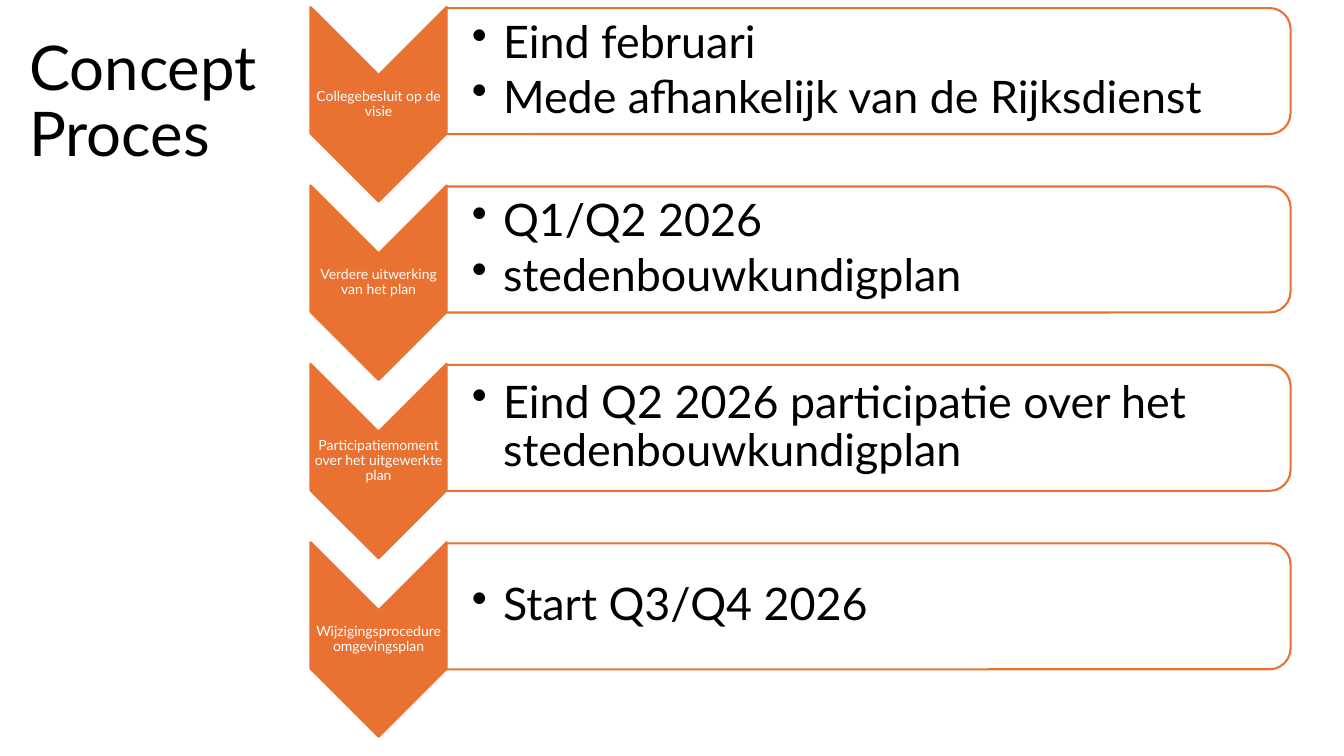
import pptx
import pptx.dml.color
import pptx.enum.shapes
import pptx.enum.text
import pptx.oxml.ns
import pptx.util
from lxml import etree

Inches = pptx.util.Inches
Pt = pptx.util.Pt
SHAPES = pptx.enum.shapes.MSO_SHAPE
ALIGN = pptx.enum.text.PP_ALIGN

FONT = "Lato"
ORANGE, WHITE, BLACK = "E97132", "FFFFFF", "000000"
STEP_LEFT, STEP_TOP, STEP_PITCH = 3.08, 0.07, 1.77
CHEVRON_WIDTH, CHEVRON_HEIGHT = 1.35, 1.93
PANEL_WIDTH, PANEL_HEIGHT = 8.37, 1.25

STEPS = [
    ("Collegebesluit op de visie",
     ["Eind februari", "Mede afhankelijk van de Rijksdienst"]),
    ("Verdere uitwerking van het plan",
     ["Q1/Q2 2026", "stedenbouwkundigplan"]),
    ("Participatiemoment over het uitgewerkte plan",
     ["Eind Q2 2026 participatie over het stedenbouwkundigplan"]),
    ("Wijzigingsprocedure omgevingsplan",
     ["Start Q3/Q4 2026"]),
]


def color(value):
    return pptx.dml.color.RGBColor.from_string(value)


def add_bullet(para, indent):
    properties = para._p.get_or_add_pPr()
    properties.set("marL", str(Inches(indent)))
    properties.set("indent", str(-Inches(indent)))
    bullet = etree.SubElement(properties, pptx.oxml.ns.qn("a:buChar"))
    bullet.set("char", "•")


def write_text(box, lines, size, fill, align=ALIGN.LEFT, insets=None,
               space_after=0, bullet_indent=None):
    frame = box.text_frame
    frame.word_wrap = True
    frame.auto_size = pptx.enum.text.MSO_AUTO_SIZE.NONE
    frame.vertical_anchor = pptx.enum.text.MSO_ANCHOR.MIDDLE
    if insets:
        (frame.margin_left, frame.margin_top,
         frame.margin_right, frame.margin_bottom) = map(Inches, insets)
    for index, line in enumerate(lines):
        para = frame.add_paragraph() if index else frame.paragraphs[0]
        para.text = line
        if bullet_indent:
            para.level = 1
            add_bullet(para, bullet_indent)
        para.alignment = align
        para.line_spacing = 0.9
        para.space_after = Pt(space_after)
        for span in para.runs:
            span.font.name = FONT
            span.font.size = Pt(size)
            span.font.color.rgb = color(fill)


def add_text(page, left, top, width, height, lines, **text_format):
    box = page.shapes.add_textbox(*map(Inches, (left, top, width, height)))
    write_text(box, lines, **text_format)


def add_turned_shape(page, kind, left, top, width, height, fill):
    """Add a shape turned a quarter that covers the given box."""
    turned_left = left + (width - height) / 2
    turned_top = top + (height - width) / 2
    shape = page.shapes.add_shape(
        kind, *map(Inches, (turned_left, turned_top, height, width)))
    shape.rotation = 90
    shape.shadow.inherit = False
    shape.fill.solid()
    shape.fill.fore_color.rgb = color(fill)
    shape.line.color.rgb = color(ORANGE)
    shape.line.width = Pt(1.5)
    return shape


def add_title(page, left, top, width, height):
    title = page.shapes.title
    title.left, title.top, title.width, title.height = map(
        Inches, (left, top, width, height))
    write_text(title, ["Concept\nProces"], size=44, fill=BLACK)


def add_step(page, left, top, label, bullets):
    # Chevron and its label
    add_turned_shape(page, SHAPES.CHEVRON, left, top,
                     CHEVRON_WIDTH, CHEVRON_HEIGHT, ORANGE)
    add_text(page, left, top + CHEVRON_WIDTH / 2, CHEVRON_WIDTH, 0.58,
             [label], size=10, fill=WHITE, align=ALIGN.CENTER,
             insets=(0.01,) * 4, space_after=3.5)

    # Panel and its bullets
    panel_left, panel_top = left + CHEVRON_WIDTH, top + 0.01
    panel = add_turned_shape(page, SHAPES.ROUND_2_SAME_RECTANGLE, panel_left,
                             panel_top, PANEL_WIDTH, PANEL_HEIGHT, WHITE)
    panel_color = panel.fill._xPr.find(".//" + pptx.oxml.ns.qn("a:srgbClr"))
    alpha = etree.SubElement(panel_color, pptx.oxml.ns.qn("a:alpha"))
    alpha.set("val", "90000")
    add_text(page, panel_left, panel_top + 0.06, PANEL_WIDTH - 0.06,
             PANEL_HEIGHT - 0.12, bullets, size=32, fill=BLACK,
             insets=(0.25, 0.02, 0.02, 0.02), space_after=4.8,
             bullet_indent=0.31)


def main():
    deck = pptx.Presentation()
    deck.slide_width, deck.slide_height = Inches(13.33), Inches(7.5)
    page = deck.slides.add_slide(deck.slide_layouts.get_by_name("Title Only"))
    add_title(page, 0.19, 0.3, 11.5, 1.45)
    for index, (label, bullets) in enumerate(STEPS):
        add_step(page, STEP_LEFT, STEP_TOP + index * STEP_PITCH, label, bullets)
    deck.save("out.pptx")


if __name__ == "__main__":
    main()
